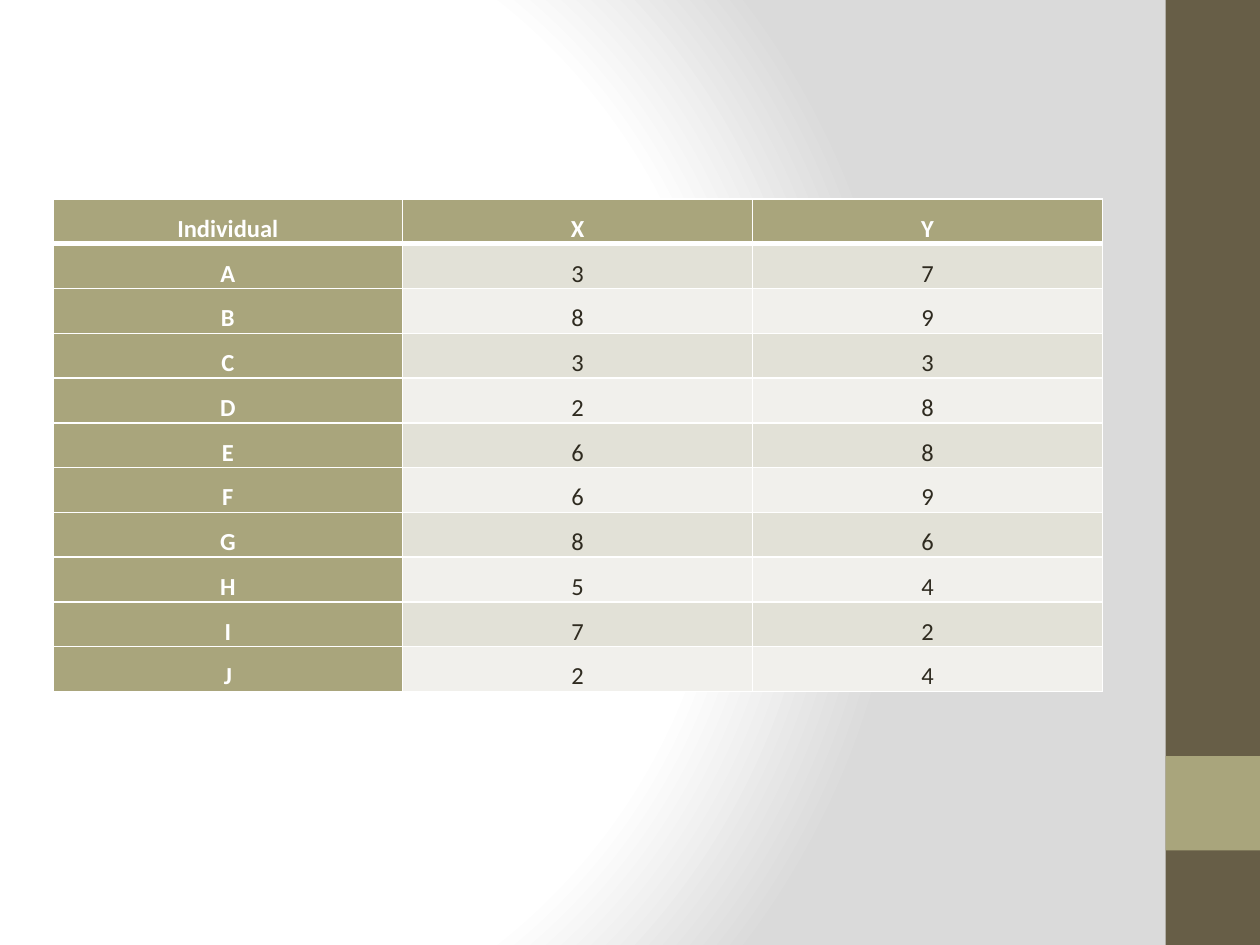
from typing import NamedTuple

from lxml.etree import SubElement
from pptx import Presentation
from pptx.dml.color import RGBColor
from pptx.enum.shapes import MSO_SHAPE
from pptx.enum.text import MSO_ANCHOR, PP_ALIGN
from pptx.oxml import parse_xml
from pptx.oxml.ns import nsdecls, qn
from pptx.util import Inches, Pt

COLORS = {
    "white": "FFFFFF",
    "gray": "DADADA",
    "brown": "675E47",
    "olive": "A9A57C",
    "dark band": "E2E1D7",
    "light band": "F1F0EC",
    "text": "2F2B20",
}
BACKGROUND_STOPS = [(0, "white"), (75, "white"), (100, "gray")]
CELL_FORMAT = {
    "vertical_anchor": MSO_ANCHOR.MIDDLE,
    "margin_left": Inches(0.08),
    "margin_right": Inches(0.08),
    "margin_top": 0,
    "margin_bottom": 0,
}
PARAGRAPH_FORMAT = {"alignment": PP_ALIGN.CENTER, "line_spacing": 1.5}


class Bar(NamedTuple):
    top: float
    height: float
    color: str


class Score(NamedTuple):
    individual: str
    x: str
    y: str


BARS = [Bar(0, 7.5, "brown"), Bar(6, 0.75, "olive")]
HEADER = Score("Individual", "X", "Y")
SCORES = [
    Score("A", "3", "7"),
    Score("B", "8", "9"),
    Score("C", "3", "3"),
    Score("D", "2", "8"),
    Score("E", "6", "8"),
    Score("F", "6", "9"),
    Score("G", "8", "6"),
    Score("H", "5", "4"),
    Score("I", "7", "2"),
    Score("J", "2", "4"),
]


def rgb(name: str) -> RGBColor:
    return RGBColor.from_string(COLORS[name])


def apply_format(target, values: dict) -> None:
    for name, value in values.items():
        setattr(target, name, value)


def fill_background(slide) -> None:
    """Give the slide a circular gradient, which python-pptx cannot set."""
    slide.background.fill.gradient()
    linear_gradient = slide.element.find(".//" + qn("a:gradFill"))
    stops = "".join(
        f'<a:gs pos="{position * 1000}"><a:srgbClr val="{COLORS[color]}"/></a:gs>'
        for position, color in BACKGROUND_STOPS
    )
    circular_gradient = parse_xml(
        f'<a:gradFill {nsdecls("a")} rotWithShape="1"><a:gsLst>{stops}</a:gsLst>'
        '<a:path path="circle">'
        '<a:fillToRect l="20000" t="50000" r="100000" b="50000"/>'
        "</a:path></a:gradFill>"
    )
    linear_gradient.getparent().replace(linear_gradient, circular_gradient)


def add_bar(slide, bar: Bar) -> None:
    shape = slide.shapes.add_shape(
        MSO_SHAPE.RECTANGLE,
        Inches(9.25), Inches(bar.top), Inches(0.75), Inches(bar.height),
    )
    shape.shadow.inherit = False
    shape.fill.solid()
    shape.fill.fore_color.rgb = rgb(bar.color)
    shape.line.fill.background()


def set_borders(cell, widths: dict[str, float]) -> None:
    """Draw white borders; they must precede the fill in the cell properties."""
    properties = cell._tc.get_or_add_tcPr()
    for index, (side, width) in enumerate(widths.items()):
        line = SubElement(properties, qn(f"a:ln{side}"), w=str(Pt(width)))
        fill = SubElement(line, qn("a:solidFill"))
        SubElement(fill, qn("a:srgbClr"), val=COLORS["white"])
        properties.insert(index, line)


def format_cell(cell, text: str, row: int, column: int) -> None:
    is_heading = row == 0 or column == 0
    band = "dark band" if row % 2 else "light band"
    apply_format(cell, CELL_FORMAT)
    cell.fill.solid()
    cell.fill.fore_color.rgb = rgb("olive" if is_heading else band)
    top = 3 if row == 1 else 1
    bottom = 3 if row == 0 else 1
    set_borders(cell, {"L": 1, "R": 1, "T": top, "B": bottom})

    paragraph = cell.text_frame.paragraphs[0]
    apply_format(paragraph, PARAGRAPH_FORMAT)
    run = paragraph.add_run()
    run.text = text
    apply_format(run.font, {"name": "Calibri", "size": Pt(14), "bold": is_heading})
    run.font.color.rgb = rgb("white" if is_heading else "text")


def add_score_table(slide) -> None:
    rows = [HEADER, *SCORES]
    table = slide.shapes.add_table(
        len(rows), len(HEADER),
        Inches(0.42), Inches(1.58), Inches(8.33), Inches(0.35 * len(rows)),
    ).table
    table.first_col = True
    for row, score in enumerate(rows):
        for column, text in enumerate(score):
            format_cell(table.cell(row, column), text, row, column)


def main() -> None:
    presentation = Presentation()
    presentation.slide_width = Inches(10)
    presentation.slide_height = Inches(7.5)
    blank_layout = presentation.slide_layouts[6]
    slide = presentation.slides.add_slide(blank_layout)
    fill_background(slide)
    for bar in BARS:
        add_bar(slide, bar)
    add_score_table(slide)
    presentation.save("out.pptx")


if __name__ == "__main__":
    main()
